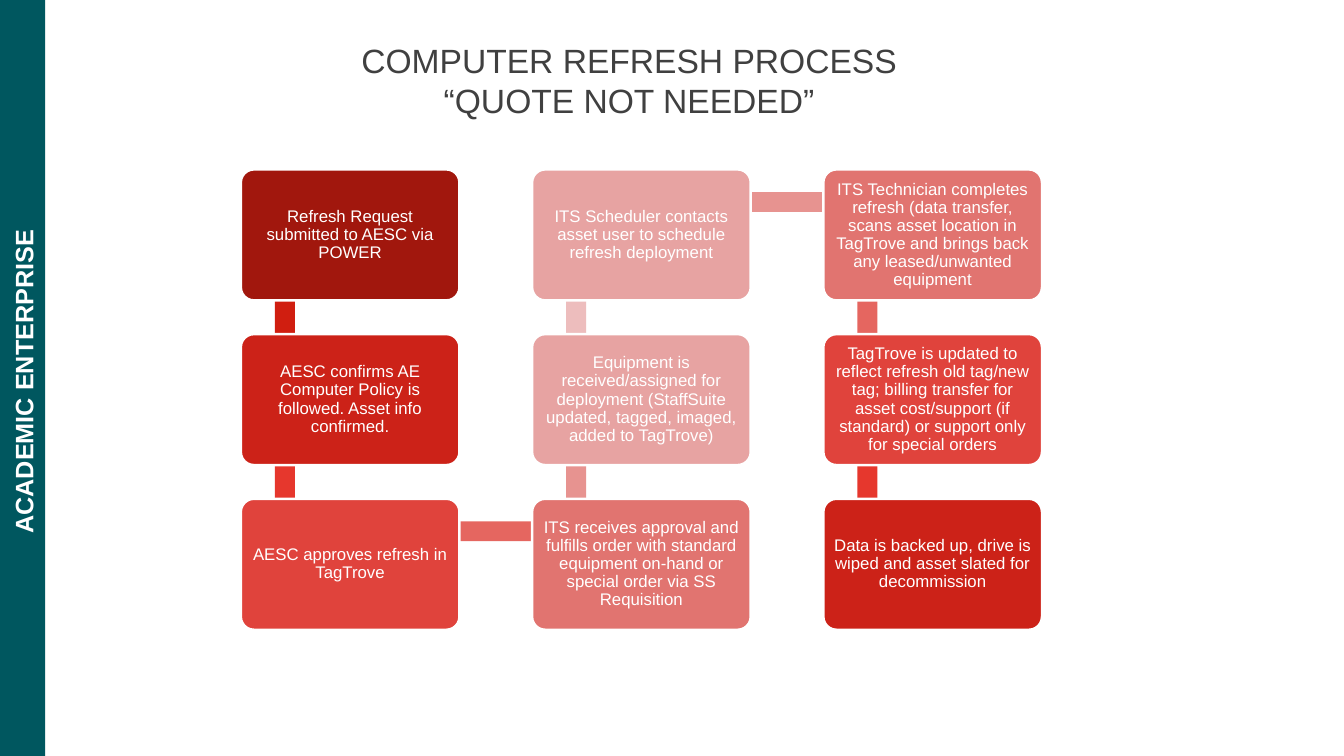
from pptx import Presentation
from pptx.dml.color import RGBColor
from pptx.enum.shapes import MSO_SHAPE
from pptx.enum.text import MSO_ANCHOR, PP_ALIGN
from pptx.util import Cm, Pt

TEAL = RGBColor(0x00, 0x57, 0x5F)
WHITE = RGBColor(0xFF, 0xFF, 0xFF)
CHARCOAL = RGBColor(0x40, 0x40, 0x40)
MAROON = RGBColor(0xA1, 0x17, 0x0D)
CRIMSON = RGBColor(0xCC, 0x22, 0x18)
RED = RGBColor(0xE0, 0x43, 0x3C)
CORAL = RGBColor(0xE1, 0x74, 0x70)
PINK = RGBColor(0xE7, 0xA3, 0xA2)
LINK_DEEP = RGBColor(0xD0, 0x1E, 0x10)
LINK_RED = RGBColor(0xE6, 0x37, 0x2D)
LINK_CORAL = RGBColor(0xE5, 0x66, 0x60)
LINK_ROSE = RGBColor(0xE7, 0x93, 0x90)
LINK_PINK = RGBColor(0xED, 0xBD, 0xBD)

# Steps in order, each with its fill and the colour of the link to the next
STEPS = [
    ("Refresh Request submitted to AESC via POWER", MAROON, LINK_DEEP),
    ("AESC confirms AE Computer Policy is followed. Asset info confirmed.",
     CRIMSON, LINK_RED),
    ("AESC approves refresh in TagTrove", RED, LINK_CORAL),
    ("ITS receives approval and fulfills order with standard equipment "
     "on-hand or special order via SS Requisition", CORAL, LINK_ROSE),
    ("Equipment is received/assigned for deployment (StaffSuite updated, "
     "tagged, imaged, added to TagTrove)", PINK, LINK_PINK),
    ("ITS Scheduler contacts asset user to schedule refresh deployment",
     PINK, LINK_ROSE),
    ("ITS Technician completes refresh (data transfer, scans asset location "
     "in TagTrove and brings back any leased/unwanted equipment",
     CORAL, LINK_CORAL),
    ("TagTrove is updated to reflect refresh old tag/new tag; billing transfer "
     "for asset cost/support (if standard) or support only for special orders",
     RED, LINK_RED),
    ("Data is backed up, drive is wiped and asset slated for decommission",
     CRIMSON, None),
]
ROWS = 3
GRID_LEFT, GRID_TOP = 6.07, 4.27
COLUMN_PITCH, ROW_PITCH = 7.34, 4.15
STEP_WIDTH, STEP_HEIGHT = 5.51, 3.3
LINK_THICKNESS = 0.5

presentation = Presentation()
presentation.slide_width, presentation.slide_height = Cm(33.87), Cm(19.05)
slide = presentation.slides.add_slide(presentation.slide_layouts[6])


def add_block(kind, left, top, width, height, color):
    block = slide.shapes.add_shape(kind, Cm(left), Cm(top), Cm(width), Cm(height))
    block.shadow.inherit = False
    block.fill.solid()
    block.fill.fore_color.rgb = color
    block.line.fill.background()
    return block


def write(frame, text, size, color, align, bold=False):
    paragraph = frame.paragraphs[0]
    paragraph.text = text
    paragraph.alignment = align
    for run in paragraph.runs:
        run.font.name = "Arial"
        run.font.size = Pt(size)
        run.font.bold = bold
        run.font.color.rgb = color
    frame.vertical_anchor = MSO_ANCHOR.MIDDLE
    return paragraph


# Sidebar
add_block(MSO_SHAPE.RECTANGLE, 0, 0, 1.14, 19.05, TEAL)
division = slide.shapes.add_textbox(Cm(-3.58), Cm(9.02), Cm(8.33), Cm(1.02))
division.rotation = 270
division.text_frame.word_wrap = True
write(division.text_frame, "ACADEMIC ENTERPRISE", 18, WHITE, PP_ALIGN.LEFT, True)

# Title
title = slide.shapes.add_textbox(Cm(5.16), Cm(1.04), Cm(21.39), Cm(1.95))
title.text_frame.word_wrap = True
title.text_frame.margin_top = title.text_frame.margin_bottom = 0
write(title.text_frame, "COMPUTER REFRESH PROCESS\v“QUOTE NOT NEEDED”",
      24, CHARCOAL, PP_ALIGN.CENTER)

# The path snakes: down the first column, up the second, down the third
corners = []
for index in range(len(STEPS)):
    column, row = divmod(index, ROWS)
    if column % 2:
        row = ROWS - 1 - row
    corners.append((GRID_LEFT + column * COLUMN_PITCH, GRID_TOP + row * ROW_PITCH))

# Links, behind the steps
for (_, _, color), (left, top), (next_left, next_top) in zip(
        STEPS, corners, corners[1:]):
    if next_left > left:
        add_block(MSO_SHAPE.RECTANGLE, left + 1.14, top + 0.57,
                  COLUMN_PITCH, LINK_THICKNESS, color)
    else:
        add_block(MSO_SHAPE.RECTANGLE, left + 0.86, min(top, next_top) + 0.84,
                  LINK_THICKNESS, ROW_PITCH, color)

# Steps
for (text, color, _), (left, top) in zip(STEPS, corners):
    step = add_block(MSO_SHAPE.ROUNDED_RECTANGLE, left, top,
                     STEP_WIDTH, STEP_HEIGHT, color)
    step.adjustments[0] = 0.1
    step.line.color.rgb = WHITE
    step.line.width = Pt(1.75)
    frame = step.text_frame
    frame.word_wrap = True
    frame.margin_left = frame.margin_right = Cm(0.13)
    frame.margin_top = frame.margin_bottom = Cm(0.13)
    write(frame, text, 12, WHITE, PP_ALIGN.CENTER).line_spacing = 0.9

presentation.save("out.pptx")
